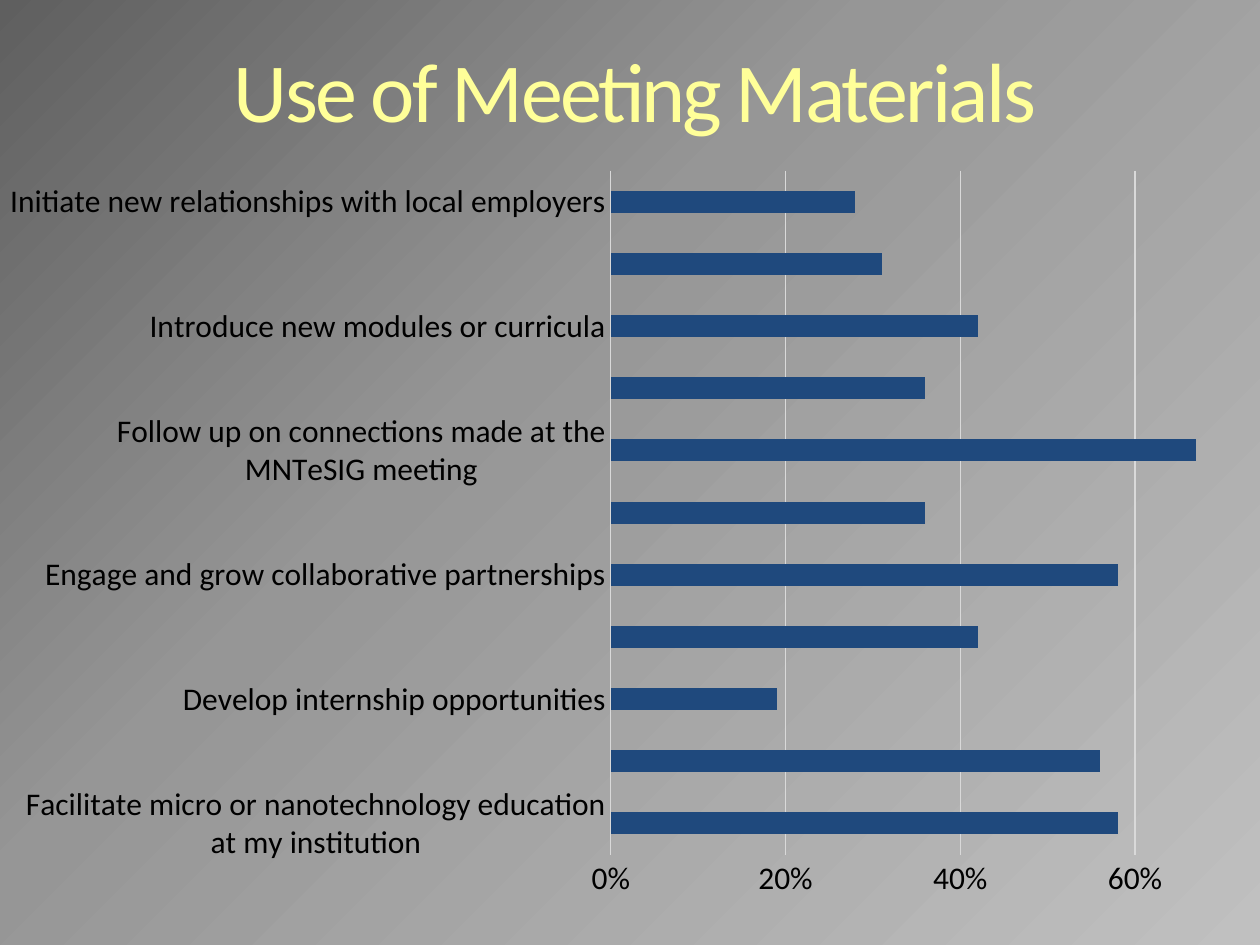
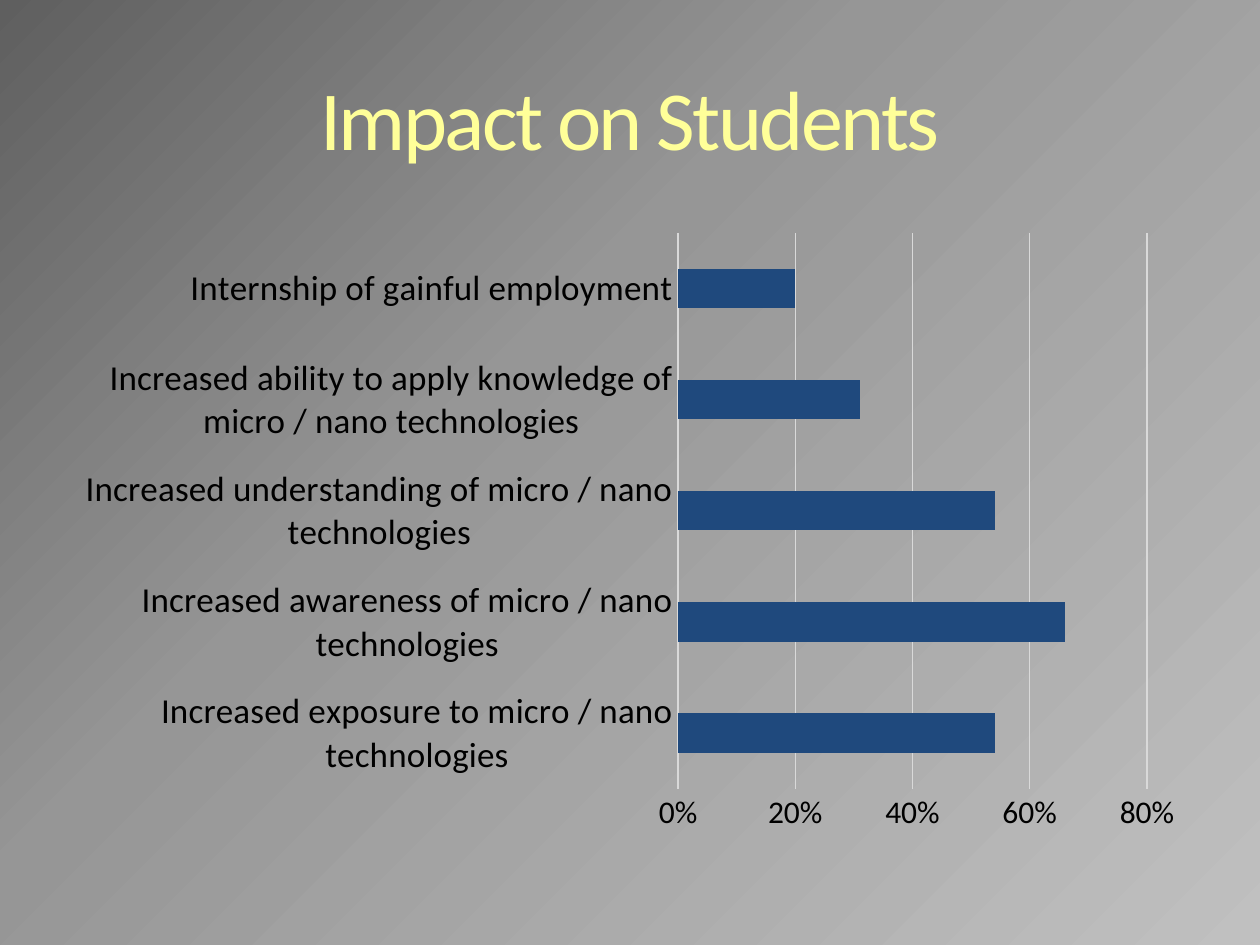
from pptx import Presentation
from pptx.chart.data import CategoryChartData
from pptx.dml.color import RGBColor
from pptx.enum.chart import XL_CHART_TYPE as Kind, XL_TICK_MARK as Tick
from pptx.enum.text import MSO_ANCHOR as Anchor, PP_ALIGN as Align
from pptx.oxml.ns import qn
from pptx.util import Pt
from lxml.etree import SubElement

FONT = "Calibri"
YELLOW = RGBColor(0xFF, 0xFF, 0x99)
NAVY = RGBColor(0x1F, 0x49, 0x7D)
BLACK = RGBColor(0, 0, 0)
PALE = RGBColor(0xD9, 0xD9, 0xD9)
BACK = [
    (0, RGBColor(0x5F, 0x5F, 0x5F)),
    (40, RGBColor(0x96, 0x96, 0x96)),
    (100, RGBColor(0xC0, 0xC0, 0xC0)),
]

# Boxes are left, top, width, height in points; rows run from the bottom up.
SLIDES = [
    {
        "title": "Use of Meeting Materials",
        "head": (38.9, 5.8, 648, 90),
        "chart": (5.8, 84.2, 714.2, 444.2),
        "plot": (0.48, 0.03, 0.49, 0.88),
        "top": 0.7,
        "size": 18,
        "rows": [
            ("Facilitate micro or nanotechnology education at my institution", 0.58),
            ("", 0.56),
            ("Develop internship opportunities", 0.19),
            ("", 0.42),
            ("Engage and grow collaborative partnerships", 0.58),
            ("", 0.36),
            ("Follow up on connections made at the MNTeSIG meeting", 0.67),
            ("", 0.36),
            ("Introduce new modules or curricula", 0.42),
            ("", 0.31),
            ("Initiate new relationships with local employers", 0.28),
        ],
    },
    {
        "title": "Impact on Students",
        "head": (36, 21.6, 648, 90),
        "chart": (36, 126, 648, 356.4),
        "plot": None,
        "top": 0.8,
        "size": 20,
        "rows": [
            ("Increased exposure to micro / nano technologies", 0.54),
            ("Increased awareness of micro / nano technologies", 0.66),
            ("Increased understanding of micro / nano technologies", 0.54),
            ("Increased ability to apply knowledge of micro / nano technologies", 0.31),
            ("Internship of gainful employment", 0.2),
        ],
    },
]


def place(box):
    return [Pt(n) for n in box]


def style(font, size, color):
    font.name, font.size = FONT, Pt(size)
    font.color.rgb = color


def paint(slide):
    """Fill the background with the diagonal grey gradient."""
    fill = slide.background.fill
    fill.gradient()
    fill.gradient_angle = 315
    stops = slide.element.find(".//" + qn("a:gsLst"))
    for old in list(stops):
        stops.remove(old)
    for pos, tint in BACK:
        stop = SubElement(stops, qn("a:gs"), pos=str(pos * 1000))
        SubElement(stop, qn("a:srgbClr"), val=str(tint))


def add_head(slide, text, box):
    frame = slide.shapes.add_textbox(*place(box)).text_frame
    frame.word_wrap = True
    frame.vertical_anchor = Anchor.MIDDLE
    para = frame.paragraphs[0]
    para.alignment = Align.CENTER
    run = para.add_run()
    run.text = text
    style(run.font, 48, YELLOW)
    run.font._element.set("spc", "-150")


def fix_plot(chart, box):
    """Pin the inner plot area to fractions of the chart."""
    area = chart._chartSpace.chart.plotArea
    layout = area.find(qn("c:layout"))
    if layout is None:
        layout = area.makeelement(qn("c:layout"), {})
        area.insert(0, layout)
    manual = SubElement(layout, qn("c:manualLayout"))
    modes = [("layoutTarget", "inner"), ("xMode", "edge"), ("yMode", "edge")]
    for tag, val in modes + list(zip("xywh", box)):
        SubElement(manual, qn("c:" + tag), val=str(val))


def rule(fmt):
    fmt.line.color.rgb = PALE
    fmt.line.width = Pt(0.75)


def add_bars(slide, page):
    data = CategoryChartData(number_format="0%")
    names, vals = zip(*page["rows"])
    data.categories = names
    data.add_series("Series 1", vals)
    chart = slide.shapes.add_chart(
        Kind.BAR_CLUSTERED, *place(page["chart"]), data).chart
    chart.has_title = chart.has_legend = False
    style(chart.font, 10, BLACK)

    bars = chart.plots[0]
    bars.gap_width = 182
    bars.vary_by_categories = False
    fill = bars.series[0].format.fill
    fill.solid()
    fill.fore_color.rgb = NAVY

    cat, val = chart.category_axis, chart.value_axis
    for axis, size in ((cat, page["size"]), (val, 18)):
        axis.major_tick_mark = axis.minor_tick_mark = Tick.NONE
        style(axis.tick_labels.font, size, BLACK)
    rule(cat.format)
    val.format.line.fill.background()
    val.minimum_scale, val.maximum_scale = 0, page["top"]
    val.major_unit = 0.2
    val.tick_labels.number_format = "0%"
    val.tick_labels.number_format_is_linked = False
    rule(val.major_gridlines.format)
    if page["plot"]:
        fix_plot(chart, page["plot"])


def main():
    deck = Presentation()
    deck.slide_width, deck.slide_height = Pt(720), Pt(540)
    for page in SLIDES:
        slide = deck.slides.add_slide(deck.slide_layouts[6])
        paint(slide)
        add_head(slide, page["title"], page["head"])
        add_bars(slide, page)
    deck.save("out.pptx")


if __name__ == "__main__":
    main()
